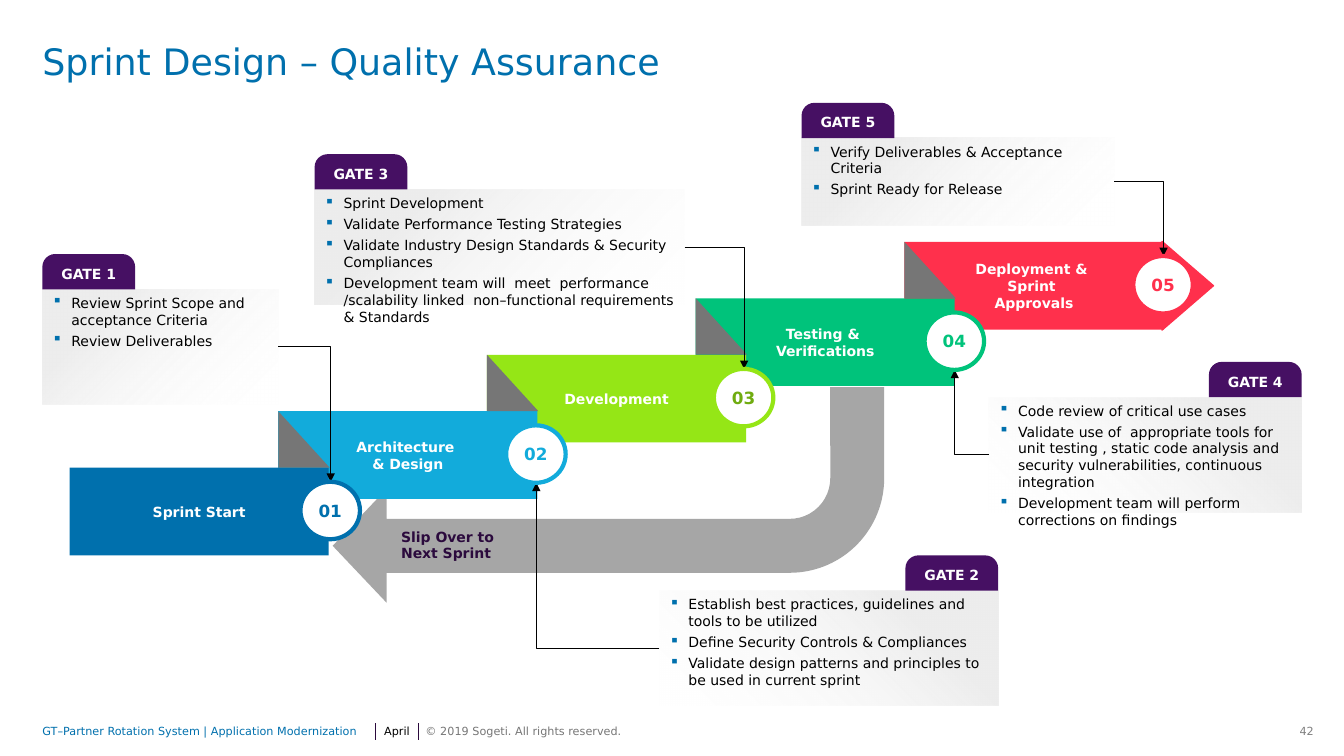
import pptx
import pptx.util
import pptx.dml.color
import pptx.enum.dml
import pptx.enum.shapes
import pptx.enum.text
import pptx.oxml
import pptx.oxml.ns
from lxml import etree

FONT = "DejaVu Sans"
BLUE, PURPLE, GREY, DARK = "0070AD", "461063", "767676", "2B0A3D"
TITLE = "Sprint Design – Quality Assurance"

# Steps, lowest first: label lines, bar colour, number colour, circle left
STEPS = [
    (["Sprint Start"], BLUE, BLUE, 298),
    (["Architecture \v& Design"], "12ABDB", "12ABDB", 502),
    (["Development"], "95E616", "70AC10", 708),
    (["Testing & \vVerifications"], "00C37B", "00C37B", 917),
    (["Deployment & ", "Sprint ", "Approvals"], "FF304C", "FF304C", 1124),
]
# Gates in step order: body box (px), side of the tab, bullets
GATES = [
    ((42, 287, 234, 114), "left",
     ["Review Sprint Scope and acceptance Criteria", "Review Deliverables"]),
    ((654, 586, 336, 114), "right",
     ["Establish best practices, guidelines and tools to be utilized",
      "Define Security Controls & Compliances",
      "Validate design patterns and principles to be used in current sprint"]),
    ((312, 188, 367, 114), "left",
     ["Sprint Development", "Validate Performance Testing Strategies",
      "Validate Industry Design Standards & Security Compliances",
      "Development team will  meet  performance /scalability linked  "
      "non–functional requirements & Standards"]),
    ((981, 394, 310, 114), "right",
     ["Code review of critical use cases",
      "Validate use of  appropriate tools for unit testing , static code analysis "
      "and security vulnerabilities, continuous integration",
      "Development team will perform corrections on findings"]),
    ((795, 137, 310, 87), "left",
     ["Verify Deliverables & Acceptance Criteria", "Sprint Ready for Release"]),
]
# Footer: text, box (px), colour, wrap, right-aligned
FOOTER = [
    ("GT–Partner Rotation System | Application Modernization",
     (42, 719, 328, 13), BLUE, False, False),
    ("April", (381, 719, 26, 13), "000000", False, False),
    ("© 2019 Sogeti. All rights reserved.", (422, 719, 206, 13), GREY, True, False),
    ("42", (1284, 719, 19, 13), "808080", True, True),
]
FOOTER_RULES = [372, 415]

BAR_X, BAR_Y, BAR_W, BAR_H = 69, 464, 257, 87
STEP_X, STEP_Y = 207, 56
FOLD_W = 51
CIRCLE_W, CIRCLE_H, CIRCLE_DY = 59, 57, 14
TAB_W, TAB_H = 92, 35

SHAPE = pptx.enum.shapes.MSO_SHAPE
ALIGN = pptx.enum.text.PP_ALIGN
ANCHOR = pptx.enum.text.MSO_ANCHOR


def px(*values):
    return [pptx.util.Emu(round(v * 9144)) for v in values]


def rgb(hex_colour):
    return pptx.dml.color.RGBColor.from_string(hex_colour)


def add_xml(parent, tag, **attrs):
    return etree.SubElement(parent, pptx.oxml.ns.qn(tag), attrs)


def write(sp, lines, size, colour, bold=False, align=ALIGN.LEFT,
          anchor=ANCHOR.MIDDLE, insets=None, bullets=False):
    tf = sp.text_frame
    tf.word_wrap = True
    tf.vertical_anchor = anchor
    if insets:
        tf.margin_left, tf.margin_top, tf.margin_right, tf.margin_bottom = px(*insets)
    tf.text = "\n".join(lines)
    for p in tf.paragraphs:
        p.alignment = align
        if bullets:
            p.space_after = pptx.util.Pt(3)
            pPr = p._p.get_or_add_pPr()
            indent = px(19)[0]
            pPr.set("marL", str(indent))
            pPr.set("indent", str(-indent))
            add_xml(add_xml(pPr, "a:buClr"), "a:srgbClr", val=BLUE)
            add_xml(pPr, "a:buChar", char="▪")
        p.font.name, p.font.size, p.font.bold = FONT, pptx.util.Pt(size), bold
        p.font.color.rgb = rgb(colour)
    return tf


def add_shape(kind, box, fill=None, line=None, width=1):
    sp = slide.shapes.add_shape(kind, *px(*box))
    sp.shadow.inherit = False
    if fill:
        sp.fill.solid()
        sp.fill.fore_color.rgb = rgb(fill)
    if line:
        sp.line.color.rgb = rgb(line)
        sp.line.width = pptx.util.Pt(width)
    else:
        sp.line.fill.background()
    return sp


def add_line(start, end, colour, bent=False):
    kinds = pptx.enum.shapes.MSO_CONNECTOR
    line = slide.shapes.add_connector(kinds.ELBOW if bent else kinds.STRAIGHT,
                                      *px(*start, *end))
    line.line.color.rgb = rgb(colour)
    line.line.width = pptx.util.Pt(0.5)
    spPr = line._element.spPr
    if bent:
        spPr.find(pptx.oxml.ns.qn("a:prstGeom")).set("prst", "bentConnector2")
        add_xml(line.line._get_or_add_ln(), "a:tailEnd", type="triangle")
    add_xml(spPr, "a:effectLst")


def fade(sp, angle):
    sp.fill.gradient()
    sp.fill.gradient_angle = angle
    for stop, colour, position in zip(sp.fill.gradient_stops, ("EDEDED", "FFFFFF"), (0.24, 1)):
        stop.color.rgb = rgb(colour)
        stop.position = position
    clear = sp._element.spPr.findall(".//" + pptx.oxml.ns.qn("a:srgbClr"))[1]
    add_xml(clear, "a:alpha", val="0")


prs = pptx.Presentation()
prs.slide_width, prs.slide_height = px(1333, 750)
slide = prs.slides.add_slide(prs.slide_layouts[5])

# Title
title = slide.shapes.title
title.left, title.top, title.width, title.height = px(42, 44, 1250, 50)
tf = write(title, [TITLE], 26, BLUE, anchor=ANCHOR.TOP, insets=(0, 0, 0, 0))
tf.auto_size = pptx.enum.text.MSO_AUTO_SIZE.NONE
tf.paragraphs[0].line_spacing = 0.9

# Footer
for text, box, colour, wrap, right in FOOTER:
    sp = slide.shapes.add_textbox(*px(*box))
    tf = write(sp, [text], 8, colour, align=ALIGN.RIGHT if right else ALIGN.LEFT,
               insets=(0, 0, 0, 0))
    tf.word_wrap = wrap
for x in FOOTER_RULES:
    add_line((x, 734), (x, 717), DARK)

# Return arrow
arrow = add_shape(SHAPE.BENT_ARROW, (330, 384, 547, 214), "A6A6A6")
for i, value in enumerate((0.25, 0.264, 0.25, 0.438)):
    arrow.adjustments[i] = value
xfrm = arrow._element.spPr.find(pptx.oxml.ns.qn("a:xfrm"))
xfrm.set("flipH", "1")
xfrm.set("flipV", "1")

# Staircase: arrow tip, bars from the top step down, then folds
tip = add_shape(SHAPE.ISOSCELES_TRIANGLE, (1134, 258, 88, 51), STEPS[-1][1], STEPS[-1][1])
tip.rotation = 90
corners = [(BAR_X + i * STEP_X, BAR_Y - i * STEP_Y) for i in range(len(STEPS))]
for (x, y), (label, fill, _, _) in reversed(list(zip(corners, STEPS))):
    bar = add_shape(SHAPE.RECTANGLE, (x, y, BAR_W, BAR_H), fill)
    write(bar, label, 10, "FFFFFF", True, ALIGN.CENTER)
for x, y in corners[1:]:
    add_shape(SHAPE.RIGHT_TRIANGLE, (x, y, FOLD_W, STEP_Y), GREY)

# Gates with their tabs and connectors
for i, ((x, y, w, h), side, items) in enumerate(GATES):
    on_left = side == "left"
    body = add_shape(SHAPE.RECTANGLE, (x, y, w, h))
    fade(body, 315 if on_left else 225)
    write(body, items, 10, "000000", anchor=ANCHOR.TOP, bullets=True)

    tab_x = x if on_left else x + w - TAB_W
    tab = add_shape(SHAPE.ROUND_2_SAME_RECTANGLE, (tab_x, y - TAB_H, TAB_W, TAB_H), PURPLE)
    tab.adjustments[0] = 0.364
    write(tab, [f"GATE {i + 1}"], 10, "FFFFFF", True, ALIGN.CENTER)

    circle_y = corners[i][1] + CIRCLE_DY
    end = (STEPS[i][3] + 30, circle_y if on_left else circle_y + CIRCLE_H)
    add_line((x + w if on_left else x, y + h // 2), end, "000000", bent=True)

# Numbered circles
for i, ((_, y), (_, ring, ink, x)) in enumerate(zip(corners, STEPS)):
    circle = add_shape(SHAPE.OVAL, (x, y + CIRCLE_DY, CIRCLE_W, CIRCLE_H), "FFFFFF", ring, 3)
    write(circle, [f"{i + 1:02}"], 12, ink, True, ALIGN.CENTER, insets=(0, 5, 0, 5))

# Return arrow label
sp = slide.shapes.add_textbox(*px(388, 519, 146, 44))
write(sp, ["Slip Over to Next Sprint"], 10, DARK, True, anchor=ANCHOR.TOP)

prs.save("out.pptx")
